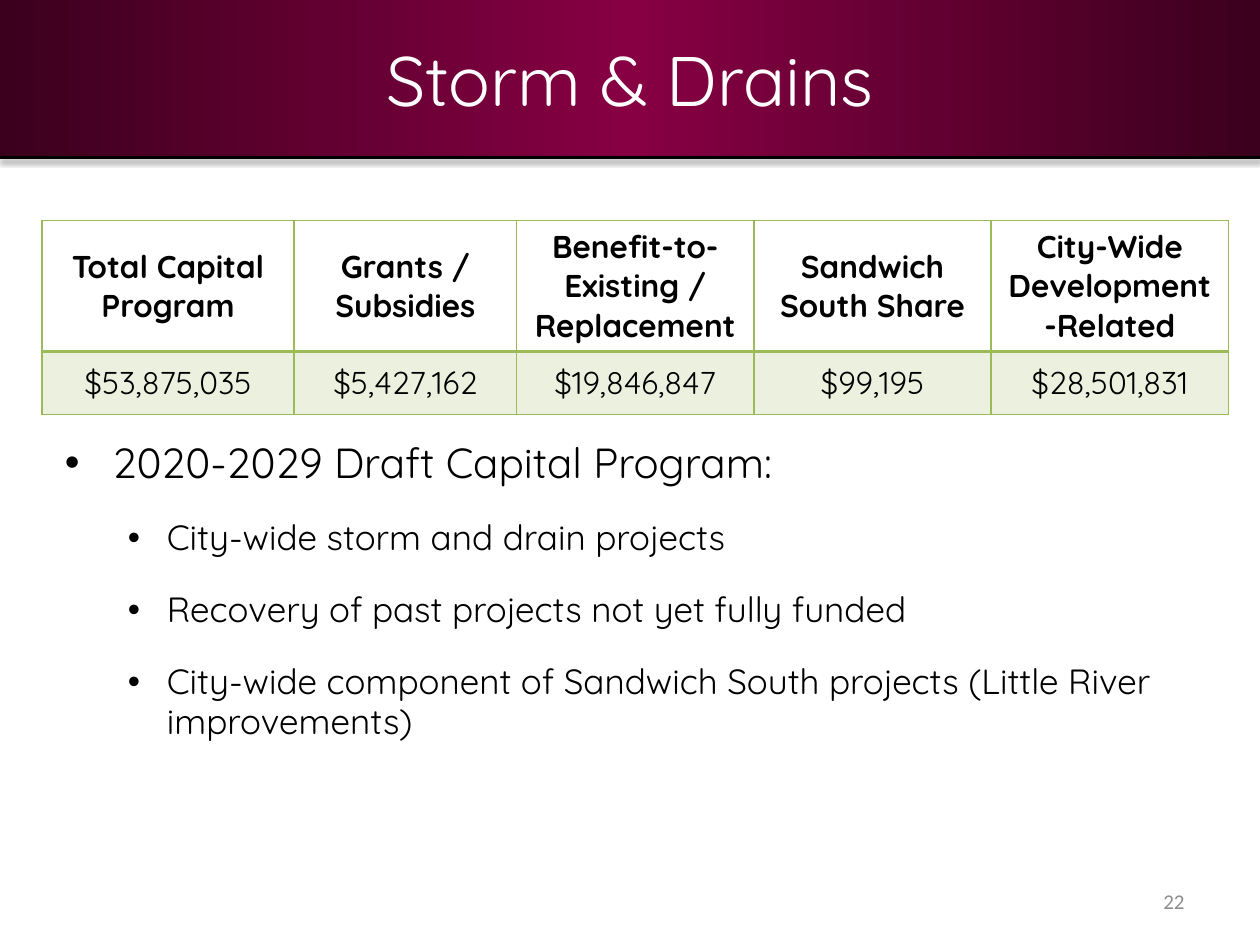
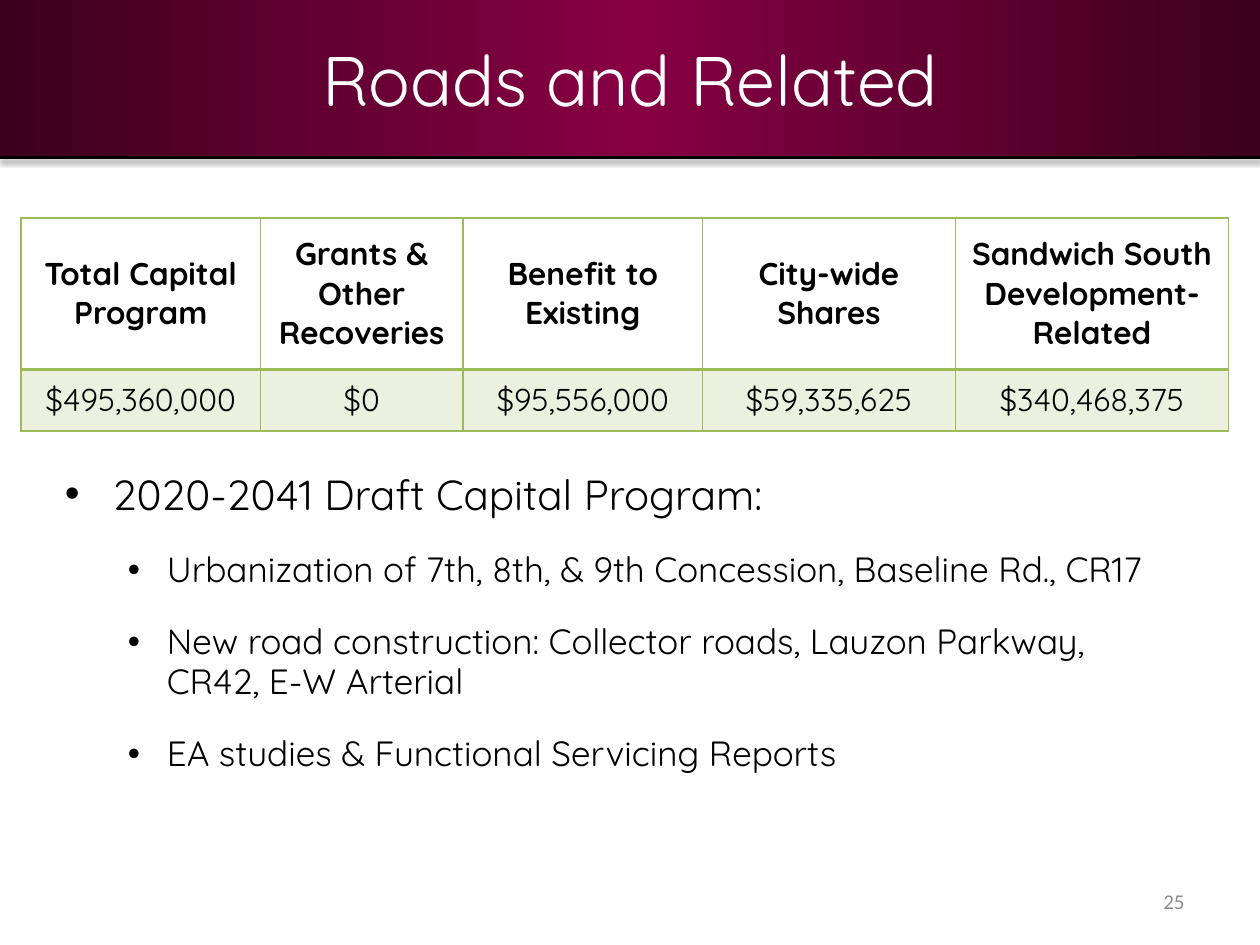
from lxml.etree import SubElement
from pptx import Presentation
from pptx.dml.color import RGBColor
from pptx.enum.shapes import MSO_CONNECTOR, MSO_SHAPE
from pptx.enum.text import MSO_ANCHOR, PP_ALIGN
from pptx.oxml import parse_xml
from pptx.oxml.ns import nsdecls, qn
from pptx.util import Inches, Pt

# Grid: 120 columns by 90 rows, one cell is a twelfth of an inch
COLUMNS, ROWS = 120, 90
BAND_ROWS = 15
FONT = "Quicksand"
BLACK, WHITE, GREY = "000000", "FFFFFF", "8C8C8C"
BAND_EDGE, BAND_CENTRE = "3C001E", "860043"
GREEN, PALE_GREEN = "9BBB59", "EBF1DE"


def color(value):
    return RGBColor.from_string(value)


def grid(*cells):
    return [Inches(cell / 12) for cell in cells]


def write(paragraph, text, size=18, fill=BLACK, bold=False, font=FONT,
          align=PP_ALIGN.LEFT):
    paragraph.alignment = align
    run = paragraph.add_run()
    run.text = text
    run.font.size = Pt(size)
    run.font.name = font
    run.font.bold = bold
    run.font.color.rgb = color(fill)


def add_text_frame(slide, box, anchor=MSO_ANCHOR.TOP):
    frame = slide.shapes.add_textbox(*grid(*box)).text_frame
    frame.word_wrap = True
    frame.vertical_anchor = anchor
    return frame


# Parts that every slide shares
def add_band(slide):
    band = slide.shapes.add_shape(
        MSO_SHAPE.RECTANGLE, *grid(0, 0, COLUMNS, BAND_ROWS))
    band.shadow.inherit = False
    band.line.fill.background()
    band.fill.background()
    stops = "".join(
        f'<a:gs pos="{position}"><a:srgbClr val="{value}"/></a:gs>'
        for position, value in
        [(0, BAND_EDGE), (50000, BAND_CENTRE), (100000, BAND_EDGE)])
    gradient = parse_xml(
        f'<a:gradFill {nsdecls("a")}><a:gsLst>{stops}</a:gsLst>'
        '<a:lin ang="0" scaled="0"/></a:gradFill>')
    properties = band._element.spPr
    properties.replace(properties.find(qn("a:noFill")), gradient)


def add_band_edge(slide):
    edge = slide.shapes.add_connector(
        MSO_CONNECTOR.STRAIGHT, *grid(0, BAND_ROWS, COLUMNS, BAND_ROWS))
    edge.line.color.rgb = color(BLACK)
    edge.line.width = Pt(2)
    edge._element.spPr.append(parse_xml(
        f'<a:effectLst {nsdecls("a")}>'
        f'<a:outerShdw blurRad="{Pt(3.1)}" dist="{Pt(1.6)}" dir="5400000" '
        f'rotWithShape="0"><a:srgbClr val="{BLACK}"><a:alpha val="38000"/>'
        '</a:srgbClr></a:outerShdw></a:effectLst>'))


def start_slide(presentation, title, number):
    slide = presentation.slides.add_slide(presentation.slide_layouts[6])
    add_band(slide)
    heading = add_text_frame(
        slide, (0, 0, COLUMNS, BAND_ROWS), MSO_ANCHOR.MIDDLE)
    write(heading.paragraphs[0], title, size=40, fill=WHITE,
          align=PP_ALIGN.CENTER)
    add_band_edge(slide)
    footer = add_text_frame(slide, (86, 83.4, 28, 4.8), MSO_ANCHOR.MIDDLE)
    write(footer.paragraphs[0], number, size=12, fill=GREY, font="Calibri",
          align=PP_ALIGN.RIGHT)
    return slide


# Cost table: a header row over one row of amounts
def set_borders(cell, **widths):
    properties = cell._tc.get_or_add_tcPr()
    for index, side in enumerate("LRTB"):
        properties.insert(index, parse_xml(
            f'<a:ln{side} {nsdecls("a")} w="{Pt(widths.get(side, 1))}">'
            f'<a:solidFill><a:srgbClr val="{GREEN}"/></a:solidFill>'
            f'</a:ln{side}>'))


def add_cost_table(slide, left, top, column_widths, row_heights, costs):
    table = slide.shapes.add_table(
        2, len(costs),
        *grid(left, top, sum(column_widths), sum(row_heights))).table
    for column, width in zip(table.columns, grid(*column_widths)):
        column.width = width
    for row, height in zip(table.rows, grid(*row_heights)):
        row.height = height
    for index, texts in enumerate(costs):
        for row, text in enumerate(texts):
            cell = table.cell(row, index)
            cell.vertical_anchor = MSO_ANCHOR.MIDDLE
            write(cell.text_frame.paragraphs[0], text, bold=row == 0,
                  align=PP_ALIGN.CENTER)
            if row == 0:
                cell.fill.background()
                set_borders(cell, B=2)
            else:
                cell.fill.solid()
                cell.fill.fore_color.rgb = color(PALE_GREEN)
                set_borders(cell, T=2)


# Capital program: a heading bullet with indented points
def add_bullet(paragraph, text, size, indent, hanging, level=0):
    paragraph.level = level
    paragraph.space_after = Pt(12)
    properties = paragraph._p.get_or_add_pPr()
    properties.set("marL", str(Inches(indent)))
    properties.set("indent", str(-Inches(hanging)))
    SubElement(properties, qn("a:buFont"), typeface="Arial")
    SubElement(properties, qn("a:buChar"), char="•")
    write(paragraph, text, size=size)


def add_program(slide, top, height, heading, points):
    frame = add_text_frame(slide, (5, top, 109, height))
    add_bullet(frame.paragraphs[0], heading, 24, 0.38, 0.38)
    for point in points:
        paragraph = frame.add_paragraph()
        paragraph.space_before = Pt(6)
        paragraph.line_spacing = 0.96
        add_bullet(paragraph, point, 20, 0.81, 0.31, level=1)


def main():
    presentation = Presentation()
    presentation.slide_width, presentation.slide_height = grid(COLUMNS, ROWS)

    # Storm and drains
    slide = start_slide(presentation, "Storm & Drains", "22")
    add_program(slide, 41, 42, "2020-2029 Draft Capital Program:", [
        "City-wide storm and drain projects",
        "Recovery of past projects not yet fully funded",
        "City-wide component of Sandwich South projects "
        "(Little River improvements)",
    ])
    add_cost_table(slide, 4, 21, [24, 21.2] + [22.6] * 3, [12.5, 6], [
        ("Total Capital Program", "$53,875,035"),
        ("Grants / Subsidies", "$5,427,162"),
        ("Benefit-to-Existing / Replacement", "$19,846,847"),
        ("Sandwich South Share", "$99,195"),
        ("City-Wide Development-Related", "$28,501,831"),
    ])

    # Roads
    slide = start_slide(presentation, "Roads and Related", "25")
    add_cost_table(
        slide, 2, 20.75, [22.8, 19.3, 22.8, 24.1, 26], [14.4, 5.9], [
            ("Total Capital Program", "$495,360,000"),
            ("Grants & Other Recoveries", "$0"),
            ("Benefit to Existing", "$95,556,000"),
            ("City-wide Shares", "$59,335,625"),
            ("Sandwich South Development-Related", "$340,468,375"),
        ])
    add_program(slide, 44, 39, "2020-2041 Draft Capital Program:", [
        "Urbanization of 7th, 8th, & 9th Concession, Baseline Rd., CR17",
        "New road construction: Collector roads, Lauzon Parkway, "
        "CR42, E-W Arterial",
        "EA studies & Functional Servicing Reports",
    ])

    presentation.save("out.pptx")


if __name__ == "__main__":
    main()
